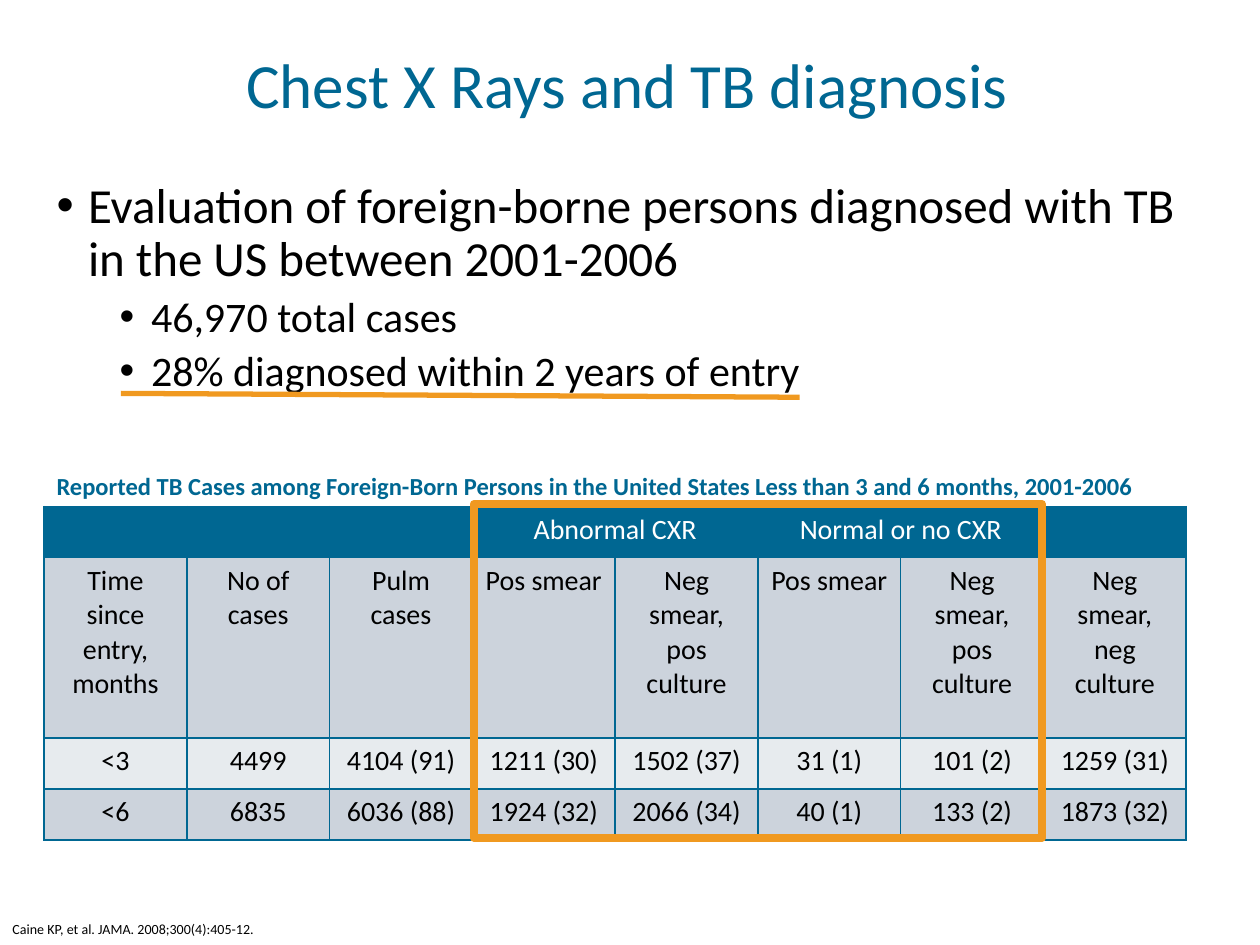
"""Build the slide on chest X rays and TB diagnosis."""
from dataclasses import dataclass

from lxml import etree
from pptx import Presentation
from pptx.dml.color import RGBColor
from pptx.enum.shapes import MSO_CONNECTOR, MSO_SHAPE
from pptx.enum.text import MSO_ANCHOR, PP_ALIGN
from pptx.oxml.ns import qn
from pptx.util import Pt

LEFT, CENTER = PP_ALIGN.LEFT, PP_ALIGN.CENTER
TOP, BOTTOM = MSO_ANCHOR.TOP, MSO_ANCHOR.BOTTOM
STRAIGHT, RECTANGLE = MSO_CONNECTOR.STRAIGHT, MSO_SHAPE.RECTANGLE


@dataclass(frozen=True)
class Theme:
    font: str = "Calibri"
    blue: str = "006792"
    orange: str = "F09920"
    black: str = "000000"
    white: str = "FFFFFF"
    band_dark: str = "CCD3DC"
    band_light: str = "E7EBEE"
    title_size: int = 36
    bullet_sizes: tuple = (28, 24)
    table_size: int = 16
    caption_size: int = 14
    citation_size: int = 8


THEME = Theme()

BULLETS = [
    (0, "Evaluation of foreign-borne persons diagnosed with TB in the US between 2001-2006"),
    (1, "46,970 total cases"),
    (1, "28% diagnosed within 2 years of entry"),
]
CASES = [
    ["", "", "", "Abnormal CXR", "", "Normal or no CXR", "", ""],
    ["Time since entry, months", "No of cases", "Pulm cases", "Pos smear",
     "Neg smear, pos culture", "Pos smear", "Neg smear, pos culture", "Neg smear, neg culture"],
    ["<3", "4499", "4104 (91)", "1211 (30)", "1502 (37)", "31 (1)", "101 (2)", "1259 (31)"],
    ["<6", "6835", "6036 (88)", "1924 (32)", "2066 (34)", "40 (1)", "133 (2)", "1873 (32)"],
]
ROW_HEIGHTS = [29.2, 102.9, 29.2, 29.2]
ROW_FILLS = [THEME.blue, THEME.band_dark, THEME.band_light, THEME.band_dark]
MERGED_STARTS = [3, 5]
COLUMN_WIDTH = 81.6


def style_para(para, size, color, align=LEFT, bold=False):
    """Set the alignment and font of a paragraph."""
    para.alignment = align
    para.font.name = THEME.font
    para.font.size = Pt(size)
    para.font.bold = bold
    para.font.color.rgb = RGBColor.from_string(color)


def add_box(page, left, top, width, height, anchor=TOP):
    """Add an empty wrapping text box and return its text frame."""
    frame = page.shapes.add_textbox(Pt(left), Pt(top), Pt(width), Pt(height)).text_frame
    frame.word_wrap = True
    frame.vertical_anchor = anchor
    return frame


def add_label(page, text, bounds, size, color, align=LEFT, bold=False, anchor=TOP):
    """Add a text box that holds a single line and return its paragraph."""
    para = add_box(page, *bounds, anchor).paragraphs[0]
    para.text = text
    style_para(para, size, color, align, bold)
    return para


def add_bullets(page, items, bounds):
    """Add a two-level bulleted list."""
    frame = add_box(page, *bounds)
    for index, (level, text) in enumerate(items):
        para = frame.paragraphs[0] if index == 0 else frame.add_paragraph()
        para.text = text
        para.level = level
        para.line_spacing = 0.9
        para.space_before = Pt(5 if index else 0)
        properties = para._p.get_or_add_pPr()
        properties.set("marL", str(Pt(18 + 36 * level)))
        properties.set("indent", str(Pt(-18)))
        etree.SubElement(properties, qn("a:buFont"), typeface="Arial")
        etree.SubElement(properties, qn("a:buChar"), char="•")
        style_para(para, THEME.bullet_sizes[level], THEME.black)


def add_borders(cell, color, width):
    """Draw a solid line on all four sides of a table cell."""
    properties = cell._tc.get_or_add_tcPr()
    for side in ("lnL", "lnR", "lnT", "lnB"):
        line = etree.SubElement(properties, qn(f"a:{side}"), w=str(Pt(width)))
        fill = etree.SubElement(line, qn("a:solidFill"))
        etree.SubElement(fill, qn("a:srgbClr"), val=color)


def add_case_table(page, left, top):
    """Add the table of reported cases with its merged headings."""
    columns = len(CASES[0])
    table = page.shapes.add_table(
        len(CASES), columns, Pt(left), Pt(top),
        Pt(COLUMN_WIDTH * columns), Pt(sum(ROW_HEIGHTS))).table
    for column in table.columns:
        column.width = Pt(COLUMN_WIDTH)
    for row_index, texts in enumerate(CASES):
        table.rows[row_index].height = Pt(ROW_HEIGHTS[row_index])
        color = THEME.black if row_index else THEME.white
        for column_index, text in enumerate(texts):
            cell = table.cell(row_index, column_index)
            add_borders(cell, THEME.blue, 1)
            cell.fill.solid()
            cell.fill.fore_color.rgb = RGBColor.from_string(ROW_FILLS[row_index])
            cell.text = text
            style_para(cell.text_frame.paragraphs[0], THEME.table_size, color, CENTER)
    for start in MERGED_STARTS:
        table.cell(0, start).merge(table.cell(0, start + 1))


def style_line(line, width):
    """Give a line the highlight colour and a width."""
    line.color.rgb = RGBColor.from_string(THEME.orange)
    line.width = Pt(width)


def add_underline(page, left, top, right, bottom):
    """Add a straight highlight line."""
    line = page.shapes.add_connector(STRAIGHT, Pt(left), Pt(top), Pt(right), Pt(bottom))
    style_line(line.line, 3)
    etree.SubElement(line._element.spPr, qn("a:effectLst"))


def add_highlight(page, left, top, width, height):
    """Add an unfilled highlight frame."""
    frame = page.shapes.add_shape(RECTANGLE, Pt(left), Pt(top), Pt(width), Pt(height))
    frame.shadow.inherit = False
    frame.fill.background()
    style_line(frame.line, 4.5)


def main():
    """Build and save the slide."""
    deck = Presentation()
    deck.slide_width, deck.slide_height = Pt(720), Pt(540)
    page = deck.slides.add_slide(deck.slide_layouts[6])
    title = add_label(page, "Chest X Rays and TB diagnosis", (25.2, 18, 666, 55.4),
                      THEME.title_size, THEME.blue, CENTER, anchor=BOTTOM)
    title.line_spacing = 0.9
    add_bullets(page, BULLETS, (25.2, 100, 666, 378.7))
    add_label(page, "Caine KP, et al. JAMA. 2008;300(4):405-12.", (0, 522.7, 444.2, 17.3),
              THEME.citation_size, THEME.black)
    add_underline(page, 69.1, 224.8, 457, 227)
    add_case_table(page, 25.2, 289.5)
    add_label(page, "Reported TB Cases among Foreign-Born Persons in the United States "
              "Less than 3 and 6 months, 2001-2006", (25.2, 265.7, 677.5, 41),
              THEME.caption_size, THEME.blue, bold=True)
    add_highlight(page, 270.7, 288, 324.7, 190.8)
    deck.save("out.pptx")


if __name__ == "__main__":
    main()
